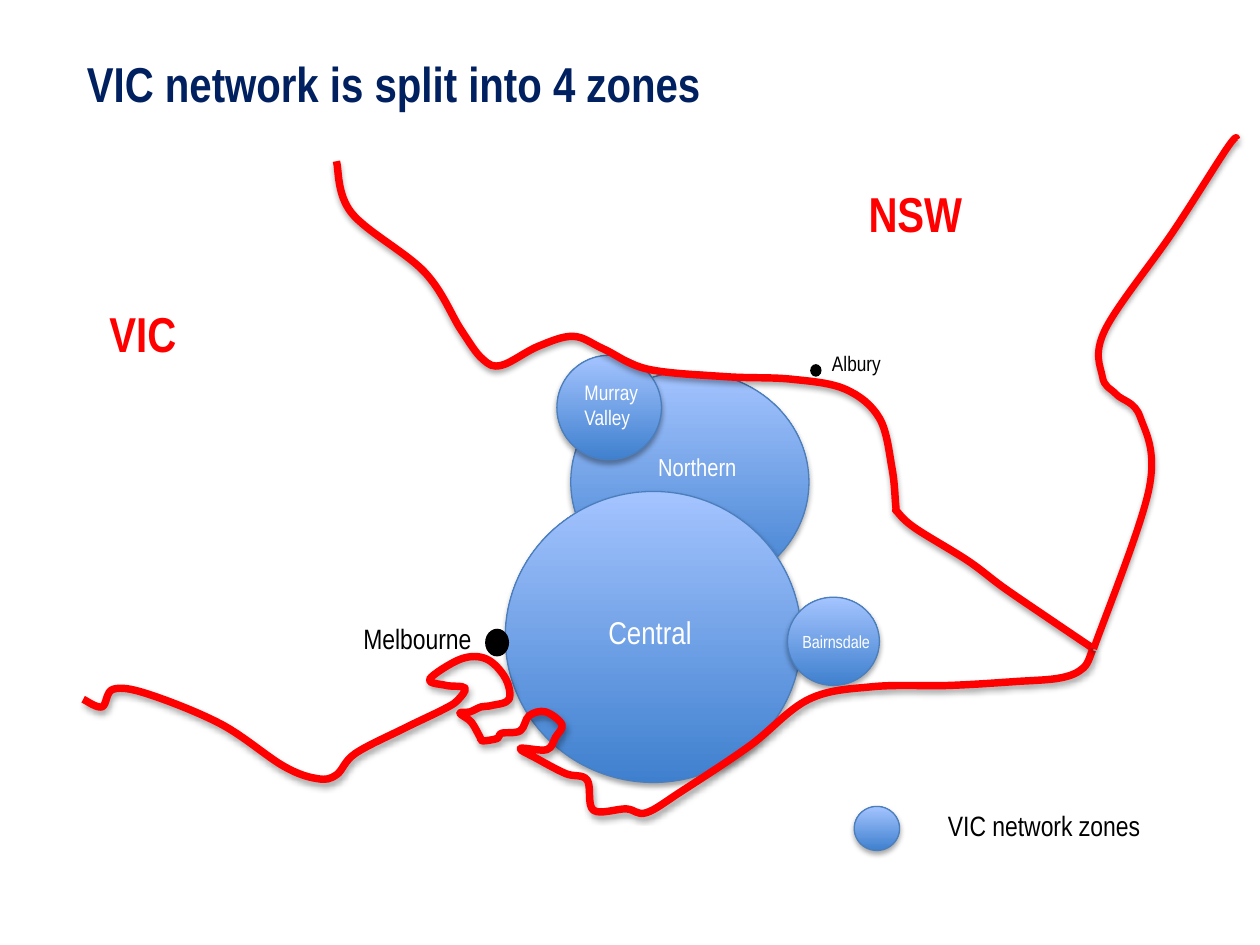
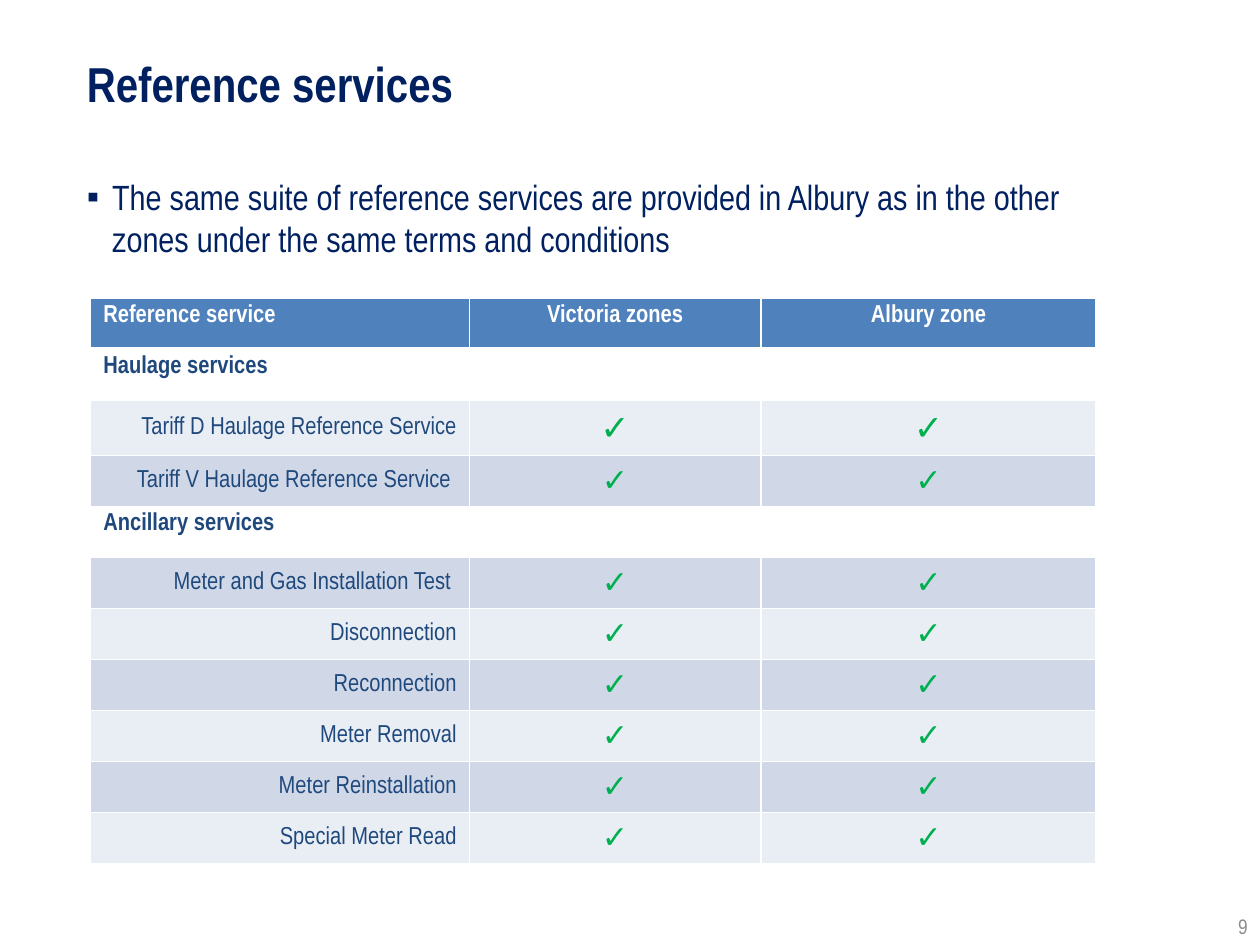
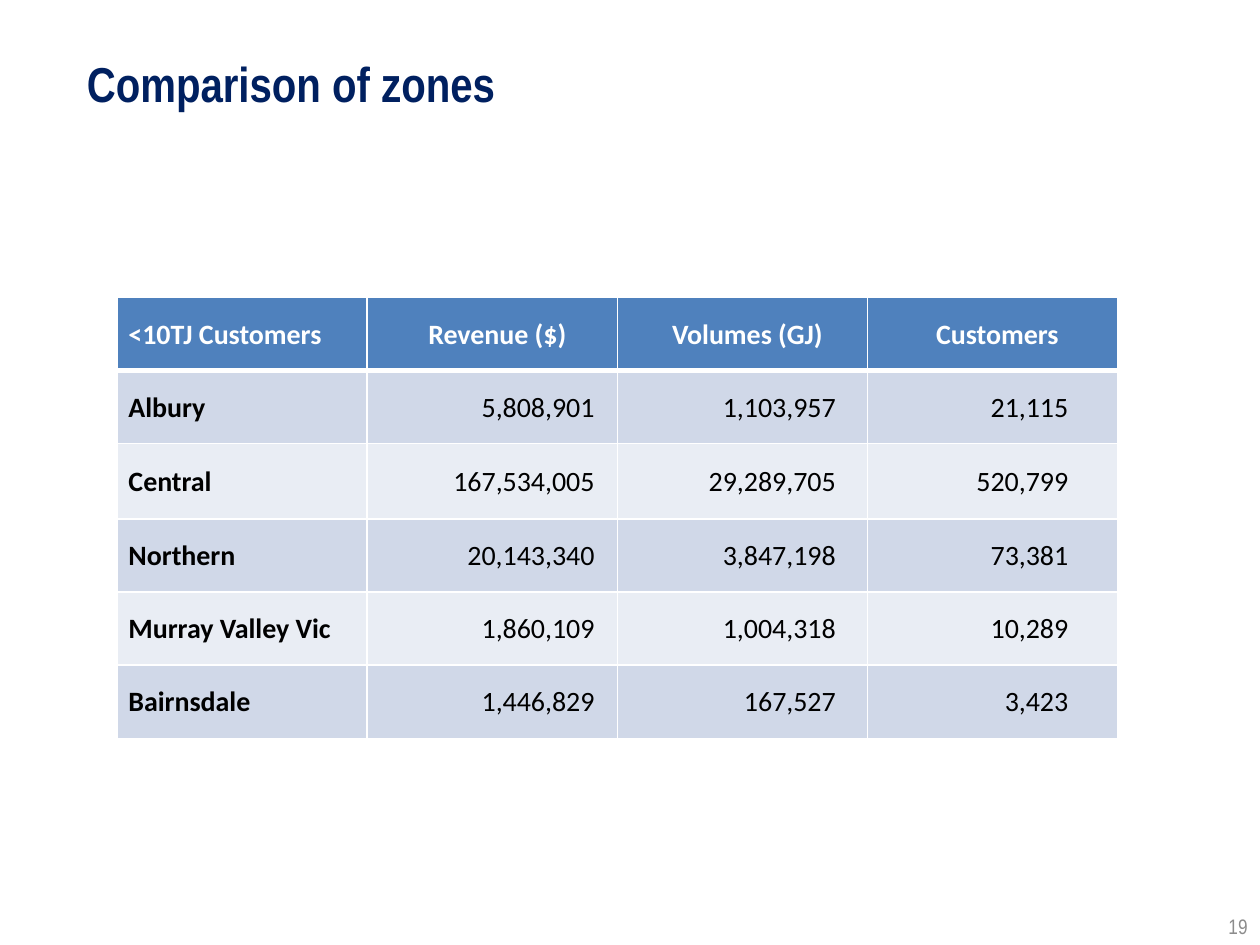
from dataclasses import dataclass
from typing import NamedTuple

from lxml import etree
from pptx import Presentation, util as u
from pptx.dml.color import RGBColor
from pptx.enum import shapes, text
from pptx.oxml.ns import qn

# Shared look
NARROW, ARIAL, CALIBRI = "Arial Narrow", "Arial", "Calibri"
NAVY, RED, BLACK, WHITE = "002060", "FF0000", "000000", "FFFFFF"
HEADER, DARK_BAND, LIGHT_BAND = "4F81BD", "D0D8E8", "E9EDF4"
TABLE_TEXT, TICK_GREEN, PAGE_GREY = "1F497D", "00B050", "8C8C8C"
ZONE_LOW, ZONE_HIGH, ZONE_EDGE = "3F80CE", "A4C4FF", "4B7EBC"
LEFT, CENTER, RIGHT = text.PP_ALIGN.LEFT, text.PP_ALIGN.CENTER, text.PP_ALIGN.RIGHT
TOP, MIDDLE, BOTTOM = text.MSO_ANCHOR.TOP, text.MSO_ANCHOR.MIDDLE, text.MSO_ANCHOR.BOTTOM

# The page is a grid of 100 columns by 75 rows
SLIDE_WIDTH, SLIDE_HEIGHT = u.Inches(10), u.Inches(7.5)
COLUMN, ROW = SLIDE_WIDTH / 100, SLIDE_HEIGHT / 75


class Area(NamedTuple):
    left: float
    top: float
    width: float
    height: float

    def emu(self) -> list[int]:
        return [round(n * step) for n, step in zip(self, (COLUMN, ROW) * 2)]


@dataclass(frozen=True)
class Style:
    size: float
    color: str = BLACK
    bold: bool = False
    font: str = NARROW
    align: text.PP_ALIGN = LEFT
    anchor: text.MSO_ANCHOR = TOP


@dataclass(frozen=True)
class Label:
    words: str
    area: Area
    style: Style


@dataclass(frozen=True)
class Border:
    knots: list[tuple[float, float]]
    weight: float


TITLE = Style(28, NAVY, bold=True)
PAGE_NUMBER = Style(12, PAGE_GREY, align=RIGHT, anchor=BOTTOM)
STATE = Style(28, RED, bold=True)

# Map of the zones
ZONES = [
    Area(45.3, 29.5, 18.9, 17.5),
    Area(40.1, 39, 23.5, 23.1),
    Area(62.5, 47.4, 7.3, 7),
    Area(44.2, 28.2, 8.3, 8.3),
    Area(67.8, 64, 3.6, 3.5),
]
SEA = Area(14.4, 62.1, 30.4, 11.4)
TOWNS = [Area(38.5, 49.9, 1.9, 2.2), Area(64.3, 28.9, 0.9, 1)]
MAP_LABELS = [
    Label("Murray Valley", Area(45.4, 29.6, 6.8, 5), Style(12, WHITE)),
    Label("Northern", Area(51.25, 35.4, 12.1, 3.4), Style(14, WHITE)),
    Label("Central", Area(47.3, 48.2, 12.1, 4), Style(18, WHITE)),
    Label("Bairnsdale", Area(62.7, 49.6, 7.4, 2.7), Style(10, WHITE)),
    Label("Melbourne", Area(27.85, 48.85, 18.4, 3.7), Style(16)),
    Label("Albury", Area(65.05, 27.3, 18.4, 3), Style(12)),
    Label("VIC", Area(7.7, 23.6, 18.4, 5.7), STATE),
    Label("NSW", Area(67.95, 14.1, 18.4, 5.7), STATE),
    Label("VIC network zones", Area(74.25, 63.65, 20.2, 3.7), Style(16)),
]
STATE_BORDER = Border([
    (26.7, 12.8), (27.9, 16.9), (33.7, 21.6), (36.6, 26.2), (38.3, 28.5),
    (39.8, 29), (42.7, 27.5), (45.5, 26.7), (47.9, 27.7), (51.4, 29.3),
    (57.6, 29.9), (62.8, 30.1), (67.1, 30.9), (69.8, 33.2), (70.8, 37.2),
    (71.1, 40.2), (71.2, 40.6), (72.6, 41.9), (76.8, 44.5), (79.6, 46.6),
    (83.1, 49), (86.8, 51.5),
], 4.25)
SOUTH_COAST = Border([
    (6.6, 55.5), (8.1, 56.1), (9, 54.7), (11.8, 55.1), (17.6, 57.5),
    (22.5, 60.8), (25.2, 61.8), (26.7, 61.5), (28.2, 59.8), (32.1, 57.8),
    (35.2, 56.3), (36.3, 55.6), (36.9, 54.6), (35.4, 54.4), (34.1, 53.9),
    (36.6, 52.3), (38.6, 52.3), (40.1, 53.8), (40.4, 55.5), (39, 56),
    (38.2, 56.1), (37.3, 56.5), (36.5, 56.6), (37.4, 57.3), (38.1, 58.5),
    (38.3, 58.8), (39.5, 58.6), (39.8, 58.2), (41.3, 58), (42, 56.8),
    (43.3, 56.5), (44.6, 57.5), (44.1, 58.5), (43.4, 59.5), (41.3, 59.4),
    (42.6, 60.2), (44.9, 61.4), (46.6, 61.9), (47.1, 64.3), (49.7, 64.2),
    (51.3, 64.5), (54.1, 62.8), (59.5, 59.2), (64.2, 55.5), (69.3, 54.5),
    (75.4, 54.4), (80.5, 54.1), (84.2, 53.8), (86, 53), (86.7, 51.6),
], 4.25)
EAST_COAST = Border([
    (86.8, 51.5), (91.2, 38.8), (90.5, 33.1), (88.6, 31.3), (87.5, 29.9),
    (87.7, 26.2), (93.1, 18.4), (97.5, 11.6), (98.2, 11.1),
], 4)

# Table contents
SERVICE_HEADINGS = ["Reference service", "Victoria zones", "Albury zone"]
SERVICE_ROWS = [
    "Haulage services",
    "Tariff D Haulage Reference Service",
    "Tariff V Haulage Reference Service ",
    "Ancillary services",
    "Meter and Gas Installation Test ",
    "Disconnection",
    "Reconnection",
    "Meter Removal",
    "Meter Reinstallation",
    "Special Meter Read",
]
SECTIONS = {"Haulage services", "Ancillary services"}
ZONE_HEADINGS = ["<10TJ Customers", "Revenue ($)", "Volumes (GJ)", "Customers"]
ZONE_ROWS = [
    ("Albury", 5808901, 1103957, 21115),
    ("Central", 167534005, 29289705, 520799),
    ("Northern", 20143340, 3847198, 73381),
    ("Murray Valley Vic", 1860109, 1004318, 10289),
    ("Bairnsdale", 1446829, 167527, 3423),
]
FIGURE_MARGINS = [0.18, 0.25, 0.39]


def rgb(code: str) -> RGBColor:
    return RGBColor.from_string(code)


def write(para, words: str, style: Style) -> None:
    para.alignment = style.align
    span = para.add_run()
    span.text = words
    font = span.font
    font.name, font.size, font.bold = style.font, u.Pt(style.size), style.bold
    font.color.rgb = rgb(style.color)


def place(shape, area: Area) -> None:
    shape.left, shape.top, shape.width, shape.height = area.emu()


def add_label(page, label: Label) -> None:
    box = page.shapes.add_textbox(*label.area.emu())
    frame = box.text_frame
    frame.word_wrap = True
    frame.vertical_anchor = label.style.anchor
    write(frame.paragraphs[0], label.words, label.style)


def add_page(deck, layout: int, title: str, number: str = ""):
    page = deck.slides.add_slide(deck.slide_layouts[layout])
    box = page.shapes.title
    place(box, Area(5.9, 3.75, 67, 5.7))
    frame = box.text_frame
    frame.auto_size = text.MSO_AUTO_SIZE.NONE
    frame.vertical_anchor = TITLE.anchor
    write(frame.paragraphs[0], title, TITLE)
    if number:
        add_label(page, Label(number, Area(76.7, 71, 23.3, 4), PAGE_NUMBER))
    return page


def add_shadow(shape) -> None:
    shape.shadow.inherit = False
    effects = shape._element.spPr.find(qn("a:effectLst"))
    shadow = etree.SubElement(
        effects, qn("a:outerShdw"), blurRad=str(u.Pt(3.1)), dist=str(u.Pt(1.8)),
        dir="5400000", rotWithShape="0")
    color = etree.SubElement(shadow, qn("a:srgbClr"), val=BLACK)
    etree.SubElement(color, qn("a:alpha"), val="35000")


def add_zone(page, area: Area) -> None:
    zone = page.shapes.add_shape(shapes.MSO_SHAPE.OVAL, *area.emu())
    zone.fill.gradient()
    zone.fill.gradient_angle = 90
    for stop, code in zip(zone.fill.gradient_stops, (ZONE_LOW, ZONE_HIGH)):
        stop.color.rgb = rgb(code)
    zone.line.color.rgb = rgb(ZONE_EDGE)
    zone.line.width = u.Pt(0.75)
    add_shadow(zone)


def add_flat(page, kind: shapes.MSO_SHAPE, area: Area, color: str) -> None:
    shape = page.shapes.add_shape(kind, *area.emu())
    shape.shadow.inherit = False
    shape.fill.solid()
    shape.fill.fore_color.rgb = rgb(color)
    shape.line.fill.background()


def add_border(page, border: Border) -> None:
    knots = [(round(x * COLUMN), round(y * ROW)) for x, y in border.knots]
    builder = page.shapes.build_freeform(*knots[0])
    builder.add_line_segments(knots[1:], close=False)
    curve = builder.convert_to_shape()

    # Bend each straight segment into a Catmull-Rom curve
    padded = [knots[0], *knots, knots[-1]]
    segments = list(curve._element.iter(qn("a:lnTo")))
    for segment, a, b, c, d in zip(segments, padded, padded[1:], padded[2:], padded[3:]):
        leave = [q + (r - p) / 6 for p, q, r in zip(a, b, c)]
        arrive = [q - (r - p) / 6 for p, q, r in zip(b, c, d)]
        bend = etree.Element(qn("a:cubicBezTo"))
        for x, y in (leave, arrive, c):
            etree.SubElement(bend, qn("a:pt"), x=str(round(x - curve.left)),
                             y=str(round(y - curve.top)))
        segment.getparent().replace(segment, bend)

    curve.fill.background()
    curve.line.color.rgb = rgb(RED)
    curve.line.width = u.Pt(border.weight)
    add_shadow(curve)


def add_grid(page, area: Area, widths: list[float], heights: list[float]):
    table = page.shapes.add_table(len(heights), len(widths), *area.emu()).table
    for column, width in zip(table.columns, widths):
        column.width = round(width * COLUMN)
    for row, height in zip(table.rows, heights):
        row.height = round(height * ROW)
    return table


def fill_cell(cell, words: str, style: Style, fill: str) -> None:
    cell.vertical_anchor = style.anchor
    if fill == HEADER:
        edge = etree.SubElement(cell._tc.get_or_add_tcPr(), qn("a:lnB"), w=str(u.Pt(3)))
        paint = etree.SubElement(edge, qn("a:solidFill"))
        etree.SubElement(paint, qn("a:srgbClr"), val=WHITE)
    cell.fill.solid()
    cell.fill.fore_color.rgb = rgb(fill)
    write(cell.text_frame.paragraphs[0], words, style)


def band(row: int) -> str:
    return DARK_BAND if row % 2 else LIGHT_BAND


def add_map_page(deck) -> None:
    page = add_page(deck, 5, "VIC network is split into 4 zones")
    for area in ZONES:
        add_zone(page, area)
    add_flat(page, shapes.MSO_SHAPE.RECTANGLE, SEA, WHITE)
    for border in (STATE_BORDER, SOUTH_COAST, EAST_COAST):
        add_border(page, border)
    for area in TOWNS:
        add_flat(page, shapes.MSO_SHAPE.OVAL, area, BLACK)
    for label in MAP_LABELS:
        add_label(page, label)


def add_services_page(deck) -> None:
    page = add_page(deck, 1, "Reference services", "9")

    # Bulleted statement
    body = page.placeholders[1]
    place(body, Area(5.9, 13.4, 83.4, 13.9))
    body.text_frame.auto_size = text.MSO_AUTO_SIZE.NONE
    para = body.text_frame.paragraphs[0]
    props = para._p.get_or_add_pPr()
    props.set("marL", str(u.Inches(0.2)))
    props.set("indent", str(-u.Inches(0.2)))
    color = etree.SubElement(props, qn("a:buClr"))
    etree.SubElement(color, qn("a:srgbClr"), val=NAVY)
    etree.SubElement(props, qn("a:buFont"), typeface=ARIAL)
    etree.SubElement(props, qn("a:buChar"), char="▪")
    para.space_before = u.Pt(0)
    write(para, "The same suite of reference services are provided in Albury as in "
          "the other zones under the same terms and conditions", Style(20, NAVY))

    # Table of services
    table = add_grid(page, Area(7.2, 23.7, 79.8, 44.9), [30.05, 23.15, 26.6],
                     [4.05] * (len(SERVICE_ROWS) + 1))
    for column, words in enumerate(SERVICE_HEADINGS):
        style = Style(14, WHITE, bold=True, align=CENTER if column else LEFT)
        fill_cell(table.cell(0, column), words, style, HEADER)
    service = Style(14, TABLE_TEXT, align=RIGHT, anchor=MIDDLE)
    for row, words in enumerate(SERVICE_ROWS, 1):
        first = table.cell(row, 0)
        if words in SECTIONS:
            first.merge(table.cell(row, 2))
            fill_cell(first, words, Style(14, TABLE_TEXT, bold=True), WHITE)
            continue
        fill_cell(first, words, service, band(row))
        tick = Style(20 if row == 2 else 18, TICK_GREEN, font=ARIAL,
                     align=CENTER, anchor=MIDDLE)
        for column in (1, 2):
            fill_cell(table.cell(row, column), "✓", tick, band(row))


def add_comparison_page(deck) -> None:
    page = add_page(deck, 5, "Comparison of zones", "19")
    heights = [5.8, 5.8, 6, 5.8, 5.8, 5.8]
    table = add_grid(page, Area(9.3, 23.6, 79.4, 35), [19.85] * 4, heights)
    for row, values in enumerate([ZONE_HEADINGS, *ZONE_ROWS]):
        for column, value in enumerate(values):
            cell = table.cell(row, column)
            cell.margin_left = u.Inches(0.09)
            cell.margin_top = cell.margin_right = u.Inches(0.01)
            cell.margin_bottom = 0
            align = LEFT if column == 0 else RIGHT if row else CENTER
            if align == RIGHT:
                cell.margin_right = u.Inches(FIGURE_MARGINS[column - 1])
            style = Style(16, BLACK if row else WHITE, bold=row == 0 or column == 0,
                          font=CALIBRI, align=align, anchor=MIDDLE)
            words = f"{value:,}" if isinstance(value, int) else value
            fill_cell(cell, words, style, band(row) if row else HEADER)


def main() -> None:
    deck = Presentation()
    deck.slide_width, deck.slide_height = SLIDE_WIDTH, SLIDE_HEIGHT
    add_map_page(deck)
    add_services_page(deck)
    add_comparison_page(deck)
    deck.save("out.pptx")


if __name__ == "__main__":
    main()
